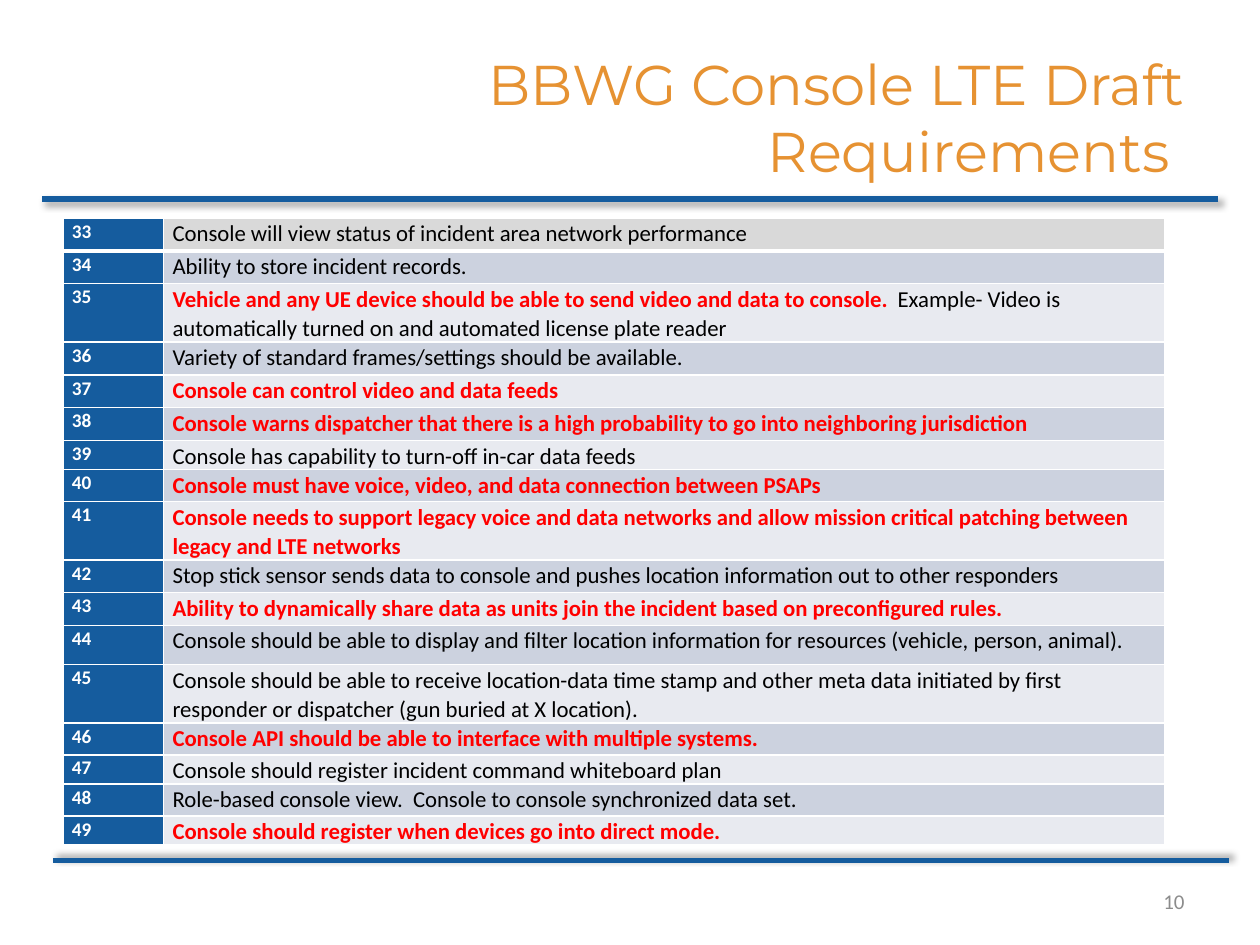
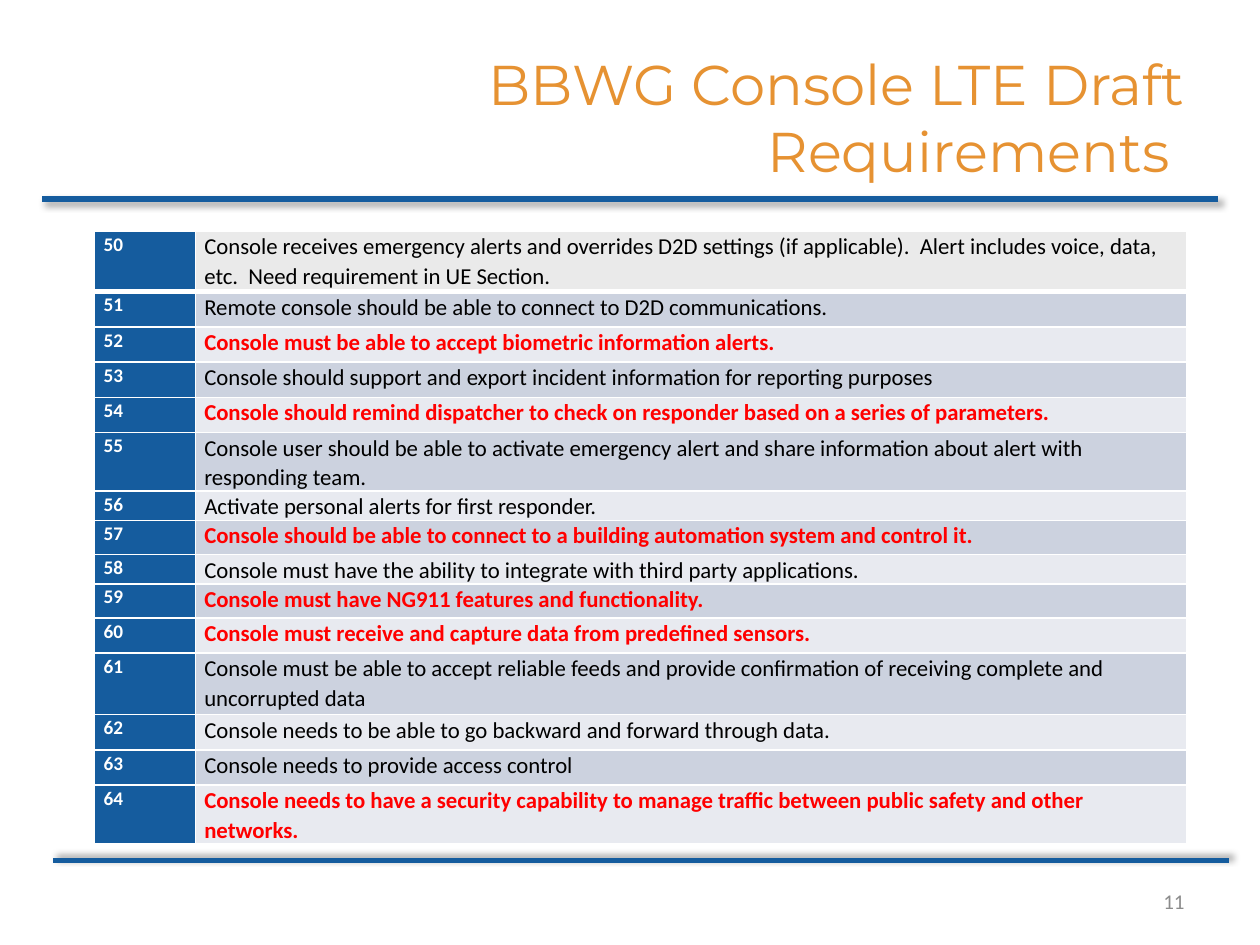
from lxml import etree
from pptx import Presentation
from pptx import util as u
from pptx.dml import color
from pptx.enum import shapes, text
from pptx.oxml import ns

COLORS = {
    "blue": "155C9E", "orange": "E69232", "red": "FF0000", "black": "000000",
    "white": "FFFFFF", "grey": "8C8C8C", "dark_band": "CCD2DF", "light_band": "E8EAF0",
    "head_a": "D9D9D9", "head_b": "EAEAEA",
}
FORMATS = {
    "title": ({"name": "Montserrat", "size": u.Pt(32), "bold": False}, "orange"),
    "page": ({"name": "Calibri", "size": u.Pt(12), "bold": False}, "grey"),
    "number": ({"name": "Calibri", "size": u.Pt(11), "bold": True}, "white"),
    "priority": ({"name": "Calibri", "size": u.Pt(13), "bold": True}, "red"),
    "plain": ({"name": "Calibri", "size": u.Pt(13), "bold": False}, "black"),
}
CELL_MARGINS = {"margin_left": u.Cm(0.18), "margin_right": u.Cm(0.18),
                "margin_top": 0, "margin_bottom": 0}
NUMBER_WIDTH = 2.03
TITLE = "BBWG Console LTE Draft Requirements "

INCIDENT_ROWS = [
    (0.66, "", "Console will view status of incident area network performance"),
    (0.66, "", "Ability to store incident records."),
    (1.17, "Vehicle and any UE device should be able to send video and data to console.  ",
     "Example- Video is automatically turned on and automated license plate reader"),
    (0.66, "", "Variety of standard frames/settings should be available."),
    (0.66, "Console can control video and data feeds", ""),
    (0.66, "Console warns dispatcher that there is a high probability to go into "
     "neighboring jurisdiction", ""),
    (0.53, "", "Console has capability to turn-off in-car data feeds"),
    (0.64, "Console must have voice, video, and data connection between PSAPs", ""),
    (0.94, "Console needs to support legacy voice and data networks and allow mission "
     "critical patching between legacy and LTE networks", ""),
    (0.66, "", "Stop stick sensor sends data to console and pushes location information "
     "out to other responders"),
    (0.66, "Ability to dynamically share data as units join the incident based on "
     "preconfigured rules.", ""),
    (0.79, "", "Console should be able to display and filter location information for "
     "resources (vehicle, person, animal)."),
    (1.07, "", "Console should be able to receive location-data time stamp and other meta "
     "data initiated by first responder or dispatcher (gun buried at X location)."),
    (0.64, "Console API should be able to interface with multiple systems.", ""),
    (0.53, "", "Console should register incident command whiteboard plan"),
    (0.64, "", "Role-based console view.  Console to console synchronized data set."),
    (0.53, "Console should register when devices go into direct mode.", ""),
]
ALERT_ROWS = [
    (1.22, "", "Console receives emergency alerts and overrides D2D settings (if applicable).  "
     "Alert includes voice, data, etc.  Need requirement in UE Section."),
    (0.71, "", "Remote console should be able to connect to D2D communications."),
    (0.71, "Console must be able to accept biometric information alerts.", ""),
    (0.71, "", "Console should support and export incident information for reporting purposes"),
    (0.71, "Console should remind dispatcher to check on responder based on a series of "
     "parameters.", ""),
    (0.89, "", "Console user should be able to activate emergency alert and share information "
     "about alert with responding team."),
    (0.56, "", "Activate personal alerts for first responder."),
    (0.69, "Console should be able to connect to a building automation system and control it.",
     ""),
    (0.56, "", "Console must have the ability to integrate with third party applications."),
    (0.69, "Console must have NG911 features and functionality.", ""),
    (0.71, "Console must receive and capture data from predefined sensors.", ""),
    (1.24, "", "Console must be able to accept reliable feeds and provide confirmation of "
     "receiving complete and uncorrupted data"),
    (0.71, "", "Console needs to be able to go backward and forward through data."),
    (0.71, "", "Console needs to provide access control"),
    (1.07, "Console needs to have a security capability to manage traffic between public "
     "safety and other networks.", ""),
]


class RequirementsDeck:
    """Draws requirement slides in one shared style."""

    def __init__(self):
        self.presentation = Presentation()
        self.presentation.slide_width = u.Cm(25.4)
        self.presentation.slide_height = u.Cm(19.05)
        self.slide = None

    def add_slide(self, page):
        self.slide = self.presentation.slides.add_slide(self.presentation.slide_layouts[6])
        self.add_rule(24.56, 0.84, 4.01, 45)
        self.add_text(str(page), "page", 18.21, 17.65, 5.92, 1.02)
        self.add_rule(24.77, 1.07, 17.35, 315)

    def add_run(self, paragraph, content, style):
        run = paragraph.add_run()
        run.text = content
        values, color_name = FORMATS[style]
        for key, value in values.items():
            setattr(run.font, key, value)
        run.font.color.rgb = color.RGBColor.from_string(COLORS[color_name])

    def add_text(self, content, style, left, top, width, height):
        box = self.slide.shapes.add_textbox(*map(u.Cm, (left, top, width, height)))
        frame = box.text_frame
        frame.word_wrap = True
        frame.vertical_anchor = text.MSO_ANCHOR.MIDDLE
        paragraph = frame.paragraphs[0]
        paragraph.alignment = text.PP_ALIGN.RIGHT
        self.add_run(paragraph, content, style)

    def add_rule(self, start, end, top, angle):
        rule = self.slide.shapes.add_connector(
            shapes.MSO_CONNECTOR.STRAIGHT, u.Cm(start), u.Cm(top), u.Cm(end), u.Cm(top))
        rule.line.width = u.Pt(3)
        rule.line.color.rgb = color.RGBColor.from_string(COLORS["blue"])
        effects = etree.SubElement(rule._element.spPr, ns.qn("a:effectLst"))
        shadow = etree.SubElement(
            effects, ns.qn("a:outerShdw"), blurRad=str(u.Pt(4)), dist=str(u.Pt(3)),
            dir=str(angle * 60000), algn="tl", rotWithShape="0")
        tint = etree.SubElement(shadow, ns.qn("a:srgbClr"), val=COLORS["black"])
        etree.SubElement(tint, ns.qn("a:alpha"), val="40000")

    def style_cell(self, cell, row, fill):
        for key, value in CELL_MARGINS.items():
            setattr(cell, key, value)
        properties = cell._tc.get_or_add_tcPr()
        for side in "LRTB":
            points = 3 if (row, side) in ((0, "B"), (1, "T")) else 1
            border = etree.SubElement(properties, ns.qn("a:ln" + side), w=str(u.Pt(points)))
            paint = etree.SubElement(border, ns.qn("a:solidFill"))
            etree.SubElement(paint, ns.qn("a:srgbClr"), val=COLORS["white"])
        cell.fill.solid()
        cell.fill.fore_color.rgb = color.RGBColor.from_string(COLORS[fill])

    def add_requirements(self, rows, first_number, head_fill, left, top, width, height):
        graphic = self.slide.shapes.add_table(
            len(rows), 2, *map(u.Cm, (left, top, width, height)))
        table = graphic.table
        table.columns[0].width = u.Cm(NUMBER_WIDTH)
        table.columns[1].width = u.Cm(width - NUMBER_WIDTH)
        for index, (row_height, priority, plain) in enumerate(rows):
            table.rows[index].height = u.Cm(row_height)
            band = "dark_band" if index % 2 else "light_band"
            fills = ("blue", band if index else head_fill)
            contents = ([(str(first_number + index), "number")],
                        [(priority, "priority"), (plain, "plain")])
            for column, (fill, runs) in enumerate(zip(fills, contents)):
                cell = table.cell(index, column)
                self.style_cell(cell, index, fill)
                paragraph = cell.text_frame.paragraphs[0]
                paragraph.line_spacing = 1.07
                for content, style in runs:
                    if content:
                        self.add_run(paragraph, content, style)
        graphic.height = u.Cm(height)


def main():
    deck = RequirementsDeck()
    pages = [
        (10, INCIDENT_ROWS, 33, "head_a", 1.27, 4.4, 22.22, 12.5),
        (11, ALERT_ROWS, 50, "head_b", 1.91, 4.66, 22.02, 12.22),
    ]
    for page, *requirements in pages:
        deck.add_slide(page)
        deck.add_requirements(*requirements)
        deck.add_text(TITLE, "title", 5.08, 0.76, 19.05, 3.18)
    deck.presentation.save("out.pptx")


if __name__ == "__main__":
    main()
